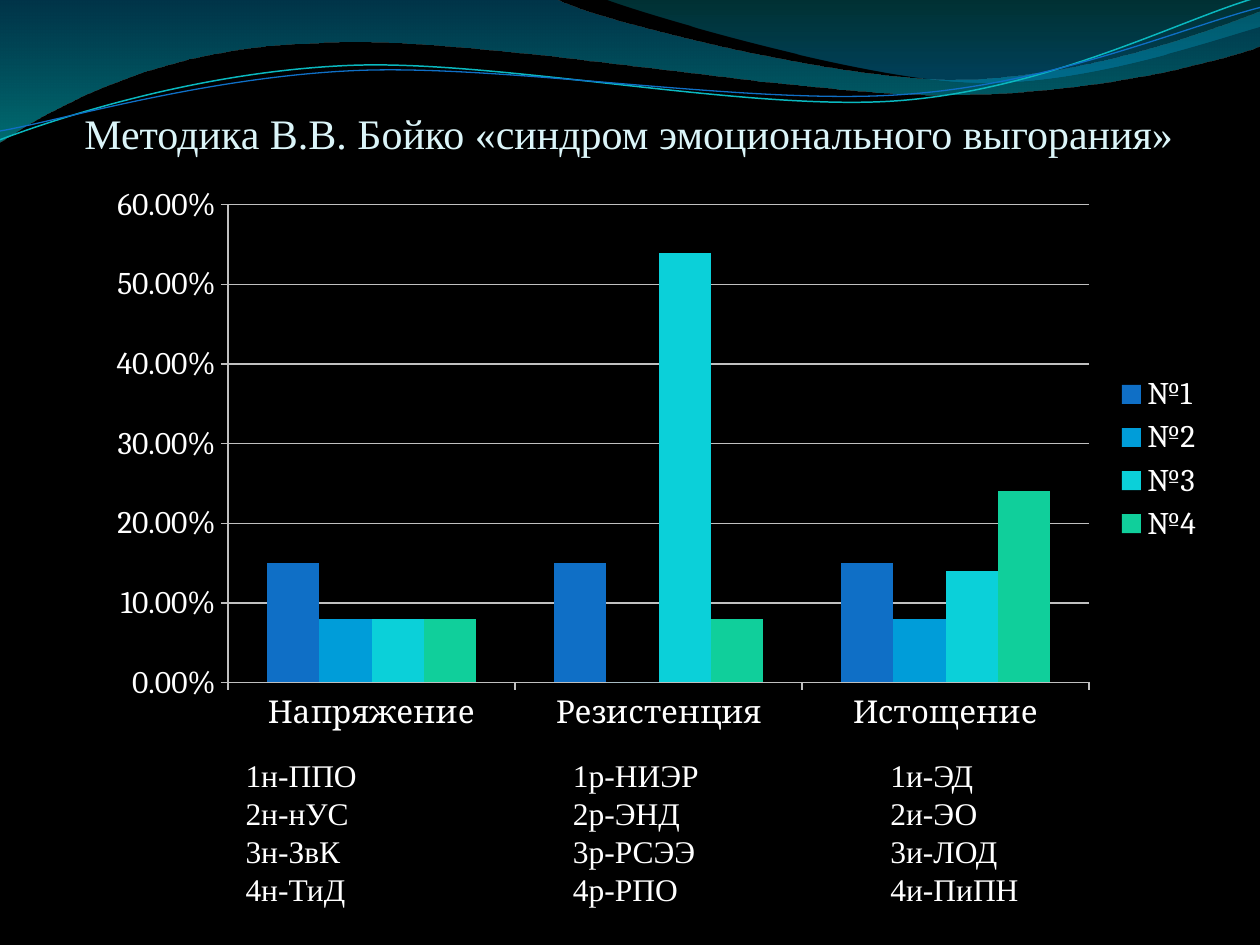
import math

import pptx
import pptx.chart.data
import pptx.dml.color
import pptx.enum.chart
import pptx.enum.text
import pptx.oxml
import pptx.oxml.ns
import pptx.util

Cm = pptx.util.Cm
Pt = pptx.util.Pt
RGBColor = pptx.dml.color.RGBColor
qn = pptx.oxml.ns.qn
BLACK = RGBColor(0x00, 0x00, 0x00)
WHITE = RGBColor(0xFF, 0xFF, 0xFF)
ICE = RGBColor(0xDB, 0xF5, 0xF9)
GRID = RGBColor(0xC0, 0xC0, 0xC0)
BLUE = RGBColor(0x0F, 0x6F, 0xC6)
SKY = RGBColor(0x00, 0x9D, 0xD9)
CYAN = RGBColor(0x0B, 0xD0, 0xD9)
GREEN = RGBColor(0x10, 0xCF, 0x9B)
TEAL = RGBColor(0x0A, 0xB8, 0xBF)
WAVE_BLUE = RGBColor(0x00, 0x74, 0xA1)
WAVE_CYAN = RGBColor(0x00, 0xC6, 0xCF)
CREST_TEAL = RGBColor(0x00, 0xA1, 0xA9)
CREST_BLUE = RGBColor(0x00, 0x8B, 0xBF)
INCH = 2.54
TILT = 2.7


def add_outline(start, segments, closed):
    points = [(Cm(x * INCH), Cm(y * INCH))
              for segment in [start, *segments]
              for x, y in zip(segment[::2], segment[1::2])]
    builder = slide.shapes.build_freeform(*points[0])
    builder.add_line_segments(points[1:], close=closed)
    outline = builder.convert_to_shape()
    outline.shadow.inherit = False
    lines = outline.element.spPr.iter(qn("a:lnTo"))
    for segment in segments:
        stretch = [next(lines) for _ in segment[::2]]
        if len(stretch) == 3:
            curve = pptx.oxml.parse_xml(f'<a:cubicBezTo {pptx.oxml.ns.nsdecls("a")}/>')
            stretch[0].addprevious(curve)
            lines = iter(list(lines))
            for line in stretch:
                curve.append(line[0])
                line.getparent().remove(line)
    return outline


def add_lines(left, top, width, height, lines, size, color):
    box = slide.shapes.add_textbox(Cm(left), Cm(top), Cm(width), Cm(height))
    frame = box.text_frame
    frame.word_wrap = True
    frame.text = "\n".join(lines)
    for paragraph in frame.paragraphs:
        paragraph.font.size = Pt(size)
        paragraph.font.name = "Times New Roman"
        paragraph.font.color.rgb = color
    return frame


presentation = pptx.Presentation()
presentation.slide_width = Cm(25.4)
presentation.slide_height = Cm(19.05)
slide = presentation.slides.add_slide(presentation.slide_layouts[6])
slide.background.fill.solid()
slide.background.fill.fore_color.rgb = BLACK

waves = [
    ((0, 0),
     [(4.4, -0.01), (4.76, 0.17, 6.64, 0.63, 7.58, 0.63),
      (8.53, 0.63, 9.58, 0.26, 10, 0.09), (10.01, 0.36),
      (9.83, 0.44, 8.7, 0.76, 7.46, 0.75), (6.22, 0.75, 3.82, 0.28, 2.57, 0.34),
      (1.29, 0.36, 0.46, 0.83, -0.01, 1.13)],
     [(0, WAVE_BLUE, 45), (1, WAVE_CYAN, 55)]),
    ((4.79, -0.01),
     [(5.09, 0.11, 6.82, 0.62, 7.69, 0.65), (8.56, 0.69, 9.61, 0.32, 10, 0.21), (10, 0)],
     [(0, CREST_TEAL, 30), (0.8, CREST_BLUE, 45)]),
]
for start, segments, stops in waves:
    wave = add_outline(start, segments, True)
    wave.line.fill.background()
    wave.fill.gradient()
    wave.fill.gradient_angle = 270
    for stop, (position, color, opacity) in zip(wave.fill.gradient_stops, stops):
        stop.position = position
        stop.color.rgb = color
    tints = wave.element.spPr.iter(qn("a:srgbClr"))
    for tint, (position, color, opacity) in zip(tints, stops):
        alpha = pptx.oxml.parse_xml(
            f'<a:alpha {pptx.oxml.ns.nsdecls("a")} val="{opacity * 1000}"/>')
        tint.append(alpha)

strands = [
    ((0, 1.11),
     [(0.48, 0.93, 1.58, 0.57, 2.77, 0.52), (3.95, 0.47, 5.93, 0.89, 7.13, 0.8),
      (8.33, 0.71, 9.38, 0.15, 9.98, -0.02)], 0.57, TEAL, 0.85),
    ((0, 1.04),
     [(0.47, 0.96, 1.64, 0.61, 2.83, 0.56), (4.03, 0.51, 5.97, 0.84, 7.17, 0.75),
      (8.36, 0.67, 9.41, 0.21, 10, 0.06)], 0.59, BLUE, 0.75),
]
cosine, sine = math.cos(math.radians(TILT)), math.sin(math.radians(TILT))
for start, segments, middle, color, weight in strands:
    level = []
    for segment in [start, *segments]:
        turned = []
        for x, y in zip(segment[::2], segment[1::2]):
            dx, dy = x - 5, y - middle
            turned += [5 + dx * cosine - dy * sine, middle + dx * sine + dy * cosine]
        level.append(turned)
    strand = add_outline(level[0], level[1:], False)
    strand.rotation = 360 - TILT
    strand.fill.background()
    strand.line.color.rgb = color
    strand.line.width = Pt(weight)

title = add_lines(1.7, 0, 22.86, 3.18,
                  ["Методика В.В. Бойко «синдром эмоционального выгорания»"], 24, ICE)
title.vertical_anchor = pptx.enum.text.MSO_ANCHOR.BOTTOM
title.margin_left = title.margin_right = title.margin_bottom = 0

burnout = pptx.chart.data.CategoryChartData(number_format="0.00%")
burnout.categories = ["Напряжение", "Резистенция", "Истощение"]
symptoms = [
    ("№1", (0.15, 0.15, 0.15), BLUE),
    ("№2", (0.08, 0, 0.08), SKY),
    ("№3", (0.08, 0.54, 0.14), CYAN),
    ("№4", (0.08, 0.08, 0.24), GREEN),
]
for name, shares, color in symptoms:
    burnout.add_series(name, shares)
chart = slide.shapes.add_chart(
    pptx.enum.chart.XL_CHART_TYPE.COLUMN_CLUSTERED,
    Cm(1.9), Cm(3.53), Cm(22.63), Cm(11.45), burnout).chart
chart.has_title = False
chart.font.size = Pt(18)
chart.font.name = "Cambria"
chart.font.color.rgb = WHITE
chart.has_legend = True
chart.legend.position = pptx.enum.chart.XL_LEGEND_POSITION.RIGHT
chart.legend.include_in_layout = False
columns = chart.plots[0]
columns.gap_width = 150
columns.overlap = 0
columns.vary_by_categories = False
for series, (name, shares, color) in zip(columns.series, symptoms):
    series.format.fill.solid()
    series.format.fill.fore_color.rgb = color
    series.invert_if_negative = False

shares_axis = chart.value_axis
shares_axis.minimum_scale = 0
shares_axis.maximum_scale = 0.6
shares_axis.major_unit = 0.1
shares_axis.has_major_gridlines = True
shares_axis.tick_labels.number_format = "0.00%"
shares_axis.tick_labels.number_format_is_linked = False
for axis in (chart.category_axis, shares_axis):
    axis.major_tick_mark = pptx.enum.chart.XL_TICK_MARK.OUTSIDE
    axis.minor_tick_mark = pptx.enum.chart.XL_TICK_MARK.NONE
for part in (chart.category_axis, shares_axis, shares_axis.major_gridlines):
    part.format.line.color.rgb = GRID
    part.format.line.width = Pt(0.75)

keys = [
    (4.7, ["1н-ППО", "2н-нУС", "3н-ЗвК", "4н-ТиД"]),
    (11.3, ["1р-НИЭР", "2р-ЭНД", "3р-РСЭЭ", "4р-РПО"]),
    (17.7, ["1и-ЭД", "2и-ЭО", "3и-ЛОД", "4и-ПиПН"]),
]
for left, lines in keys:
    key = add_lines(left, 15.12, 12.7, 3.33, lines, 18, WHITE)
    key.auto_size = pptx.enum.text.MSO_AUTO_SIZE.SHAPE_TO_FIT_TEXT

presentation.save("out.pptx")
